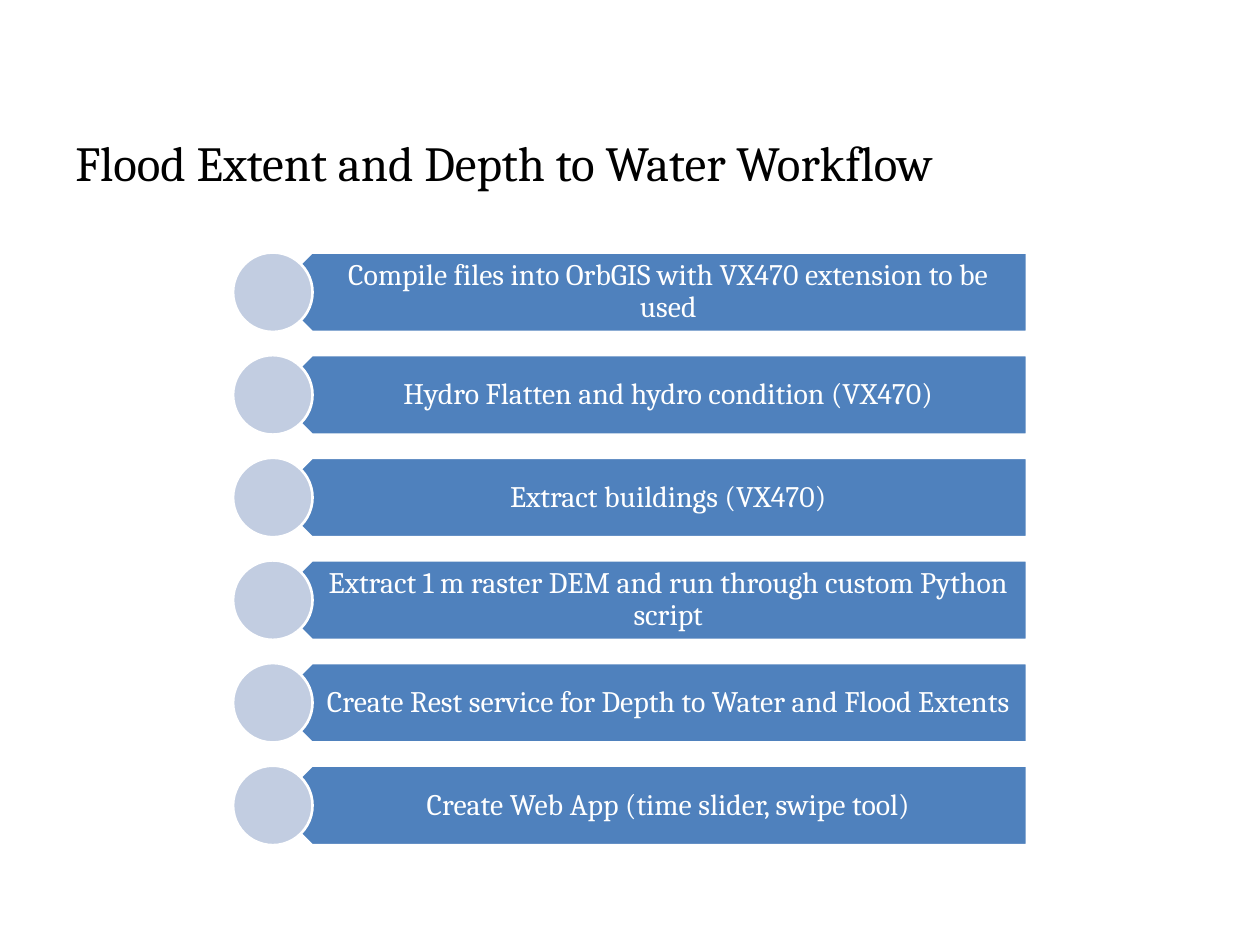
from typing import NamedTuple

from pptx import Presentation
from pptx.dml.color import RGBColor
from pptx.enum.shapes import MSO_SHAPE as Shape
from pptx.enum.text import MSO_ANCHOR as Anchor, PP_ALIGN as Align
from pptx.util import Pt

FONT = "Cambria"
WHITE, BLACK, BLUE, PALE_BLUE = "FFFFFF", "000000", "4F81BD", "C2CDE1"

FIRST_TOP = 144.3
ROW_PITCH = 58.65
ROW_HEIGHT = 45.4
CIRCLE_LEFT = 133.2
BAR_LEFT, BAR_WIDTH = 155.5, 431.3
LABEL_LEFT, LABEL_WIDTH = 167, 419.8

STEPS = [
    "Compile files into OrbGIS with VX470 extension to be used",
    "Hydro Flatten and hydro condition (VX470)",
    "Extract buildings (VX470)",
    "Extract 1 m raster DEM and run through custom Python script",
    "Create Rest service for Depth to Water and Flood Extents",
    "Create Web App (time slider, swipe tool)",
]


class Area(NamedTuple):
    left: float
    top: float
    width: float
    height: float

    def lengths(self) -> list:
        return [Pt(value) for value in self]


class TextStyle(NamedTuple):
    size: float
    color: str
    align: Align
    anchor: Anchor
    insets: tuple  # left, top, right, bottom
    line_spacing: float


TITLE_STYLE = TextStyle(28, BLACK, Align.LEFT, Anchor.TOP, (7.2, 3.6, 7.2, 3.6), 1.0)
STEP_STYLE = TextStyle(17, WHITE, Align.CENTER, Anchor.MIDDLE, (19.5, 5, 9.5, 5), 0.9)


def rgb(color: str) -> RGBColor:
    return RGBColor.from_string(color)


def set_attributes(target, values: dict) -> None:
    for name, value in values.items():
        setattr(target, name, value)


def add_text(page, area: Area, text: str, style: TextStyle) -> None:
    frame = page.shapes.add_textbox(*area.lengths()).text_frame
    left, top, right, bottom = (Pt(inset) for inset in style.insets)
    set_attributes(frame, {
        "word_wrap": True, "vertical_anchor": style.anchor,
        "margin_left": left, "margin_top": top,
        "margin_right": right, "margin_bottom": bottom,
    })
    para = frame.paragraphs[0]
    set_attributes(para, {"alignment": style.align, "line_spacing": style.line_spacing})
    span = para.add_run()
    span.text = text
    set_attributes(span.font, {"name": FONT, "size": Pt(style.size)})
    span.font.color.rgb = rgb(style.color)


def add_outlined_shape(page, kind: Shape, area: Area, fill: str, rotation: float = 0) -> None:
    shape = page.shapes.add_shape(kind, *area.lengths())
    shape.rotation = rotation
    shape.shadow.inherit = False
    shape.fill.solid()
    shape.fill.fore_color.rgb = rgb(fill)
    shape.line.color.rgb = rgb(WHITE)
    shape.line.width = Pt(1.5)


def add_step(page, top: float, text: str) -> None:
    """Draw one row: a bar pointing left, its label and a circle over the tip."""
    bar = Area(BAR_LEFT, top, BAR_WIDTH, ROW_HEIGHT)
    label = Area(LABEL_LEFT, top, LABEL_WIDTH, ROW_HEIGHT)
    circle = Area(CIRCLE_LEFT, top, ROW_HEIGHT, ROW_HEIGHT)
    add_outlined_shape(page, Shape.PENTAGON, bar, BLUE, rotation=180)
    add_text(page, label, text, STEP_STYLE)
    add_outlined_shape(page, Shape.OVAL, circle, PALE_BLUE)


def main() -> None:
    deck = Presentation()
    set_attributes(deck, {"slide_width": Pt(720), "slide_height": Pt(540)})
    page = deck.slides.add_slide(deck.slide_layouts[6])
    add_text(page, Area(36, 72, 648, 72), "Flood Extent and Depth to Water Workflow", TITLE_STYLE)
    for row, text in enumerate(STEPS):
        add_step(page, FIRST_TOP + row * ROW_PITCH, text)
    deck.save("out.pptx")


if __name__ == "__main__":
    main()
